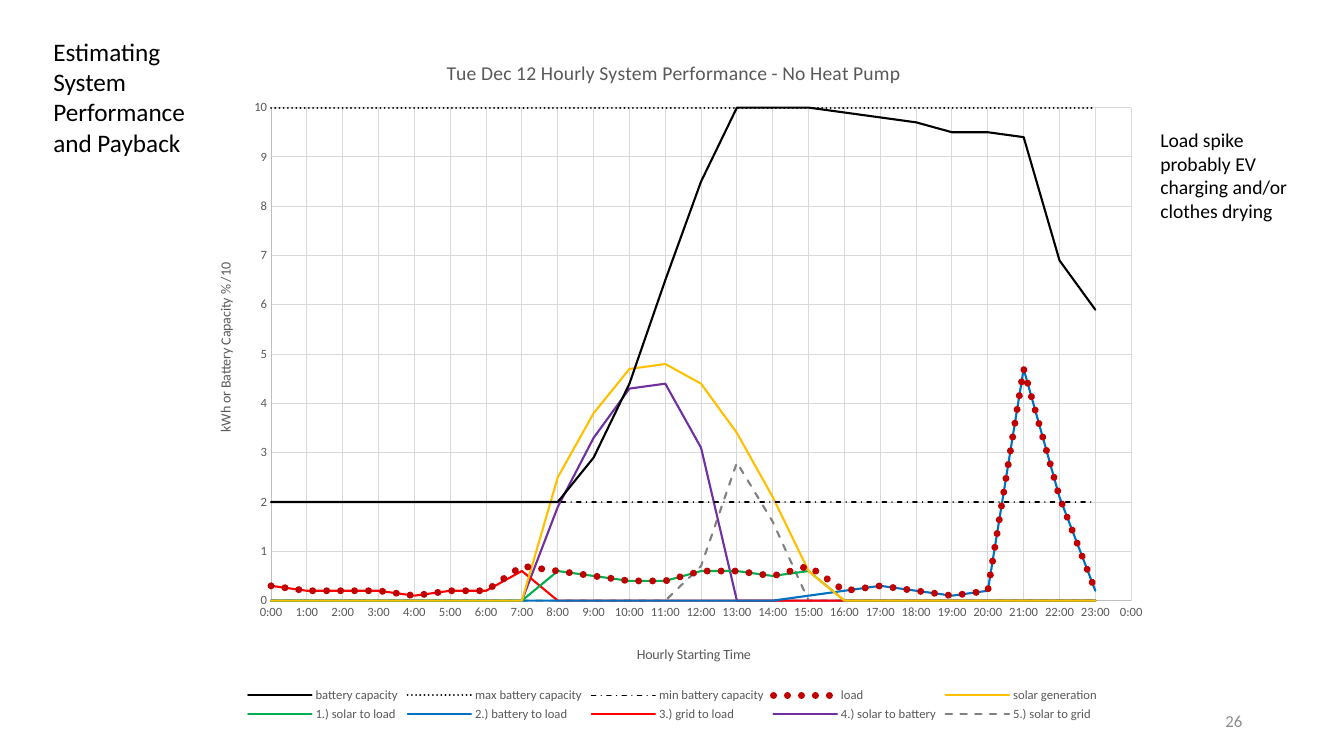
from lxml import etree
from pptx import Presentation
from pptx.chart.data import XyChartData
from pptx.dml.color import RGBColor
from pptx.enum.chart import XL_CHART_TYPE, XL_LEGEND_POSITION, XL_TICK_MARK
from pptx.enum.dml import MSO_LINE
from pptx.enum.text import MSO_ANCHOR, MSO_AUTO_SIZE, PP_ALIGN
from pptx.oxml.ns import qn
from pptx.util import Inches, Pt

SCATTER_LINES = XL_CHART_TYPE.XY_SCATTER_LINES_NO_MARKERS
LEGEND_BOTTOM = XL_LEGEND_POSITION.BOTTOM
NO_TICK = XL_TICK_MARK.NONE
SOLID, DOT = MSO_LINE.SOLID, MSO_LINE.ROUND_DOT
DASH, DASH_DOT = MSO_LINE.DASH, MSO_LINE.DASH_DOT
TOP, MIDDLE = MSO_ANCHOR.TOP, MSO_ANCHOR.MIDDLE
LEFT, RIGHT = PP_ALIGN.LEFT, PP_ALIGN.RIGHT
FIT_SHAPE = MSO_AUTO_SIZE.SHAPE_TO_FIT_TEXT

FONT = "Calibri"
BLACK, GREY = "000000", "595959"
HOURS = 24

# Name, colour, width, dash, hourly values
SERIES = [
    ("battery capacity", BLACK, 1.5, SOLID,
     [2] * 9 + [2.9, 4.4, 6.5, 8.5, 10, 10, 10, 9.9, 9.8, 9.7, 9.5, 9.5, 9.4, 6.9, 5.9]),
    ("max battery capacity", BLACK, 1.5, DOT, [10] * HOURS),
    ("min battery capacity", BLACK, 1, DASH_DOT, [2] * HOURS),
    ("load", "C00000", 5, DOT,
     [0.3, 0.2, 0.2, 0.2, 0.1, 0.2, 0.2, 0.7, 0.6, 0.5, 0.4, 0.4,
      0.6, 0.6, 0.5, 0.7, 0.2, 0.3, 0.2, 0.1, 0.2, 4.7, 2.1, 0.2]),
    ("solar generation", "FFC000", 1.5, SOLID,
     [0] * 8 + [2.5, 3.8, 4.7, 4.8, 4.4, 3.4, 2.1, 0.6] + [0] * 8),
    ("1.) solar to load", "00B050", 1.5, SOLID,
     [0] * 8 + [0.6, 0.5, 0.4, 0.4, 0.6, 0.6, 0.5, 0.6] + [0] * 8),
    ("2.) battery to load", "0070C0", 1.5, SOLID,
     [0] * 15 + [0.1, 0.2, 0.3, 0.2, 0.1, 0.2, 4.7, 2.1, 0.2]),
    ("3.) grid to load", "FF0000", 1.5, SOLID,
     [0.3, 0.2, 0.2, 0.2, 0.1, 0.2, 0.2, 0.6] + [0] * 16),
    ("4.) solar to battery", "7030A0", 1.5, SOLID,
     [0] * 8 + [1.9, 3.3, 4.3, 4.4, 3.1] + [0] * 11),
    ("5.) solar to grid", "808080", 1.5, DASH,
     [0] * 12 + [0.7, 2.8, 1.6] + [0] * 9),
]


def rgb(hex_color):
    return RGBColor.from_string(hex_color)


def style_font(font, size, color):
    font.name, font.size, font.bold = FONT, Pt(size), False
    font.color.rgb = rgb(color)


def style_line(line, color, width, dash=SOLID):
    line.color.rgb = rgb(color)
    line.width = Pt(width)
    line.dash_style = dash


def add_text(slide, box, text, size, color=BLACK, align=LEFT, anchor=TOP, fit=None):
    tf = slide.shapes.add_textbox(*map(Inches, box)).text_frame
    tf.word_wrap = True
    tf.vertical_anchor = anchor
    if fit is not None:
        tf.auto_size = fit
    p = tf.paragraphs[0]
    p.alignment = align
    r = p.add_run()
    r.text = text
    style_font(r.font, size, color)


def place(parent, after, inner=False, **fractions):
    """Position a chart part by fractions of the chart area."""
    for old in parent.findall(qn("c:layout")):
        parent.remove(old)
    layout = etree.Element(qn("c:layout"))
    manual = etree.SubElement(layout, qn("c:manualLayout"))
    if inner:
        etree.SubElement(manual, qn("c:layoutTarget")).set("val", "inner")
    for side in ("x", "y"):
        etree.SubElement(manual, qn(f"c:{side}Mode")).set("val", "edge")
    for side, value in fractions.items():
        etree.SubElement(manual, qn(f"c:{side}")).set("val", str(value))
    previous = parent.find(qn(after)) if after else None
    parent.insert(0 if previous is None else parent.index(previous) + 1, layout)


def set_title(owner, title, text, size, x, y):
    owner.has_title = True
    r = title.text_frame.paragraphs[0].add_run()
    r.text = text
    style_font(r.font, size, GREY)
    place(title._element, "c:tx", x=x, y=y)


def style_axis(axis, top, step, number_format):
    axis.minimum_scale, axis.maximum_scale, axis.major_unit = 0, top, step
    axis.major_tick_mark = axis.minor_tick_mark = NO_TICK
    axis.has_major_gridlines = True
    style_line(axis.major_gridlines.format.line, "D9D9D9", 0.75)
    style_line(axis.format.line, "BFBFBF", 0.75)
    axis.tick_labels.number_format = number_format
    axis.tick_labels.number_format_is_linked = False
    style_font(axis.tick_labels.font, 9, GREY)


def add_performance_chart(slide, box):
    data = XyChartData()
    for name, _, _, _, values in SERIES:
        series = data.add_series(name)
        for hour, value in enumerate(values):
            series.add_data_point(hour / HOURS, value)
    chart = slide.shapes.add_chart(SCATTER_LINES, *map(Inches, box), data).chart
    style_font(chart.font, 10, BLACK)

    # Lines
    plot = chart.plots[0]
    plot.vary_by_categories = False
    for series, (_, color, width, dash, _) in zip(plot.series, SERIES):
        series.smooth = False
        style_line(series.format.line, color, width, dash)
        series._element.find(qn("c:spPr")).find(qn("a:ln")).set("cap", "rnd")

    # Axes and titles
    hours, energy = chart.category_axis, chart.value_axis
    style_axis(hours, 1, 1 / HOURS, "h:mm")
    style_axis(energy, 10, 1, "#,##0")
    set_title(chart, chart.chart_title,
              "Tue Dec 12 Hourly System Performance - No Heat Pump", 14, 0.26, 0.035)
    set_title(hours, hours.axis_title, "Hourly Starting Time", 10, 0.46, 0.88)
    set_title(energy, energy.axis_title,
              "kWh or Battery Capacity % /10", 10, 0.02, 0.33)
    energy.axis_title.text_frame._txBody.bodyPr.set("rot", "-5400000")

    # Legend and plot area
    chart.has_legend = True
    chart.legend.position = LEGEND_BOTTOM
    chart.legend.include_in_layout = False
    style_font(chart.legend.font, 9, GREY)
    place(chart.legend._element, "c:legendPos", x=0.05, y=0.94, w=0.9, h=0.06)
    plot_area = chart._chartSpace.find(qn("c:chart")).find(qn("c:plotArea"))
    place(plot_area, None, inner=True, x=0.08, y=0.11, w=0.9, h=0.71)


def build_slide(prs):
    slide = prs.slides.add_slide(prs.slide_layouts[6])
    add_text(slide, (0.43, 0.31, 1.65, 1.31),
             "Estimating System Performance and Payback", 18, fit=FIT_SHAPE)
    add_performance_chart(slide, (1.93, 0.31, 9.48, 6.89))
    add_text(slide, (9.42, 6.95, 3, 0.4), "26", 12, "8C8C8C", RIGHT, MIDDLE)
    add_text(slide, (11.41, 1.22, 1.76, 1.04),
             "Load spike probably EV charging and/or clothes drying", 14, fit=FIT_SHAPE)


def main():
    prs = Presentation()
    prs.slide_width, prs.slide_height = Inches(13.33), Inches(7.5)
    build_slide(prs)
    prs.save("out.pptx")


if __name__ == "__main__":
    main()
